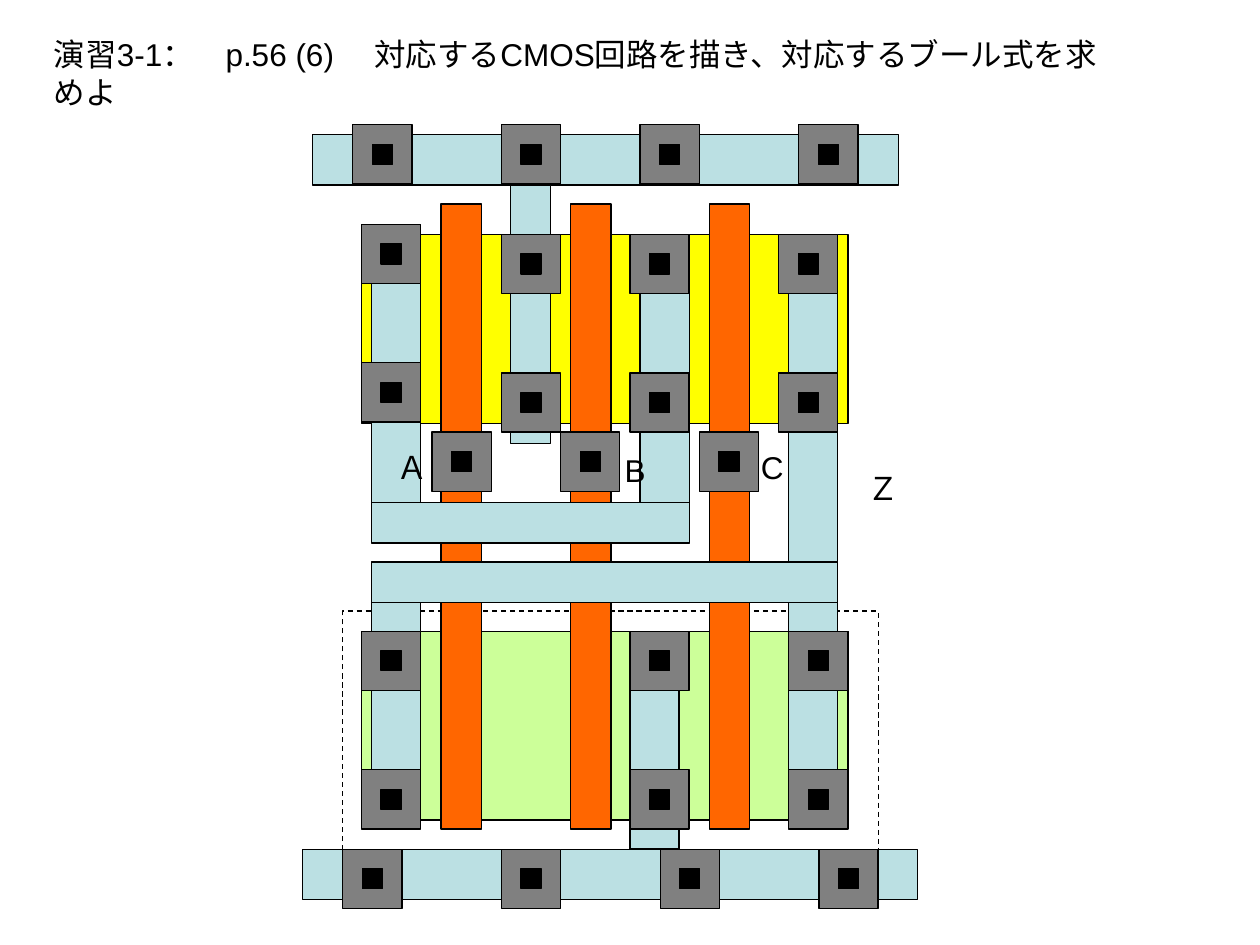
from pptx import Presentation
from pptx.dml.color import RGBColor
from pptx.enum.dml import MSO_LINE
from pptx.enum.shapes import MSO_SHAPE
from pptx.util import Inches, Pt

COLORS = {
    "ink": "000000",
    "metal": "BBE0E3",
    "poly": "FF6600",
    "pmos": "FFFF00",
    "nmos": "CCFF99",
    "pad": "808080",
}
PAD = 0.47
HOLE = 0.16


class Layout:
    font = "Arial"
    size = Pt(18)
    line = Pt(0.75)

    def __init__(self, slide):
        self.slide = slide

    def color(self, name):
        return RGBColor.from_string(COLORS[name])

    def rect(self, x, y, w, h, fill=None, home=None):
        shapes = (home or self.slide).shapes
        box = shapes.add_shape(
            MSO_SHAPE.RECTANGLE, Inches(x), Inches(y), Inches(w), Inches(h))
        box.shadow.inherit = False
        if fill:
            box.fill.solid()
            box.fill.fore_color.rgb = self.color(fill)
        else:
            box.fill.background()
        box.line.color.rgb = self.color("ink")
        box.line.width = self.line
        return box

    def well(self, x, y, w, h):
        self.rect(x, y, w, h).line.dash_style = MSO_LINE.DASH

    def contact(self, x, y):
        group = self.slide.shapes.add_group_shape()
        inset = (PAD - HOLE) / 2
        self.rect(x, y, PAD, PAD, "pad", group)
        self.rect(x + inset, y + inset, HOLE, HOLE, "ink", group)

    def label(self, text, x, y, w, wrap=False):
        box = self.slide.shapes.add_textbox(
            Inches(x), Inches(y), Inches(w), Inches(0.4))
        box.text_frame.word_wrap = wrap
        para = box.text_frame.paragraphs[0]
        para.text = text
        para.font.name = self.font
        para.font.size = self.size
        para.font.color.rgb = self.color("ink")


def main():
    deck = Presentation()
    deck.slide_width, deck.slide_height = Inches(10), Inches(7.5)
    cell = Layout(deck.slides.add_slide(deck.slide_layouts[6]))

    cell.well(2.72, 4.85, 4.25, 2.28)
    for y, fill in ((1.86, "pmos"), (5.01, "nmos")):
        cell.rect(2.87, y, 3.86, 1.5, fill)

    for x, y, w in ((2.4, 6.74, 4.88), (2.48, 1.07, 4.65)):
        cell.rect(x, y, w, 0.4, "metal")

    wires = (
        (2.95, 1.78, 0.39, 2.28),
        (2.95, 4.77, 0.39, 1.73),
        (4.05, 1.47, 0.32, 2.05),
        (5.08, 1.86, 0.39, 2.2),
        (6.26, 1.86, 0.39, 4.41),
        (5, 5.01, 0.39, 1.73),
    )
    for wire in wires:
        cell.rect(*wire, "metal")

    for x in (3.5, 4.53, 5.63):
        cell.rect(x, 1.62, 0.32, 4.96, "poly")

    for x, y, w in ((2.95, 4.46, 3.7), (2.95, 3.99, 2.52)):
        cell.rect(x, y, w, 0.32, "metal")

    rows = {
        0.99: (2.8, 3.98, 5.08, 6.34),
        1.78: (2.87,),
        1.86: (3.98, 5, 6.18),
        2.88: (2.87,),
        2.96: (3.98, 5, 6.18),
        3.43: (3.43, 4.45, 5.55),
        5.01: (2.87, 5, 6.26),
        6.11: (2.87, 5, 6.26),
        6.74: (2.72, 3.98, 5.24, 6.5),
    }
    for y, row in rows.items():
        for x in row:
            cell.contact(x, y)

    cell.label("Ａ", 3.05, 3.51, 0.38)
    cell.label("B", 4.86, 3.53, 0.37)
    cell.label("C", 5.94, 3.51, 0.38)
    cell.label("Ｚ", 6.79, 3.67, 0.36)
    cell.label(
        "演習3-1：　p.56 (6) 　対応するCMOS回路を描き、対応するブール式を求めよ",
        0.33, 0.23, 8.51, wrap=True)

    deck.save("out.pptx")


if __name__ == "__main__":
    main()
